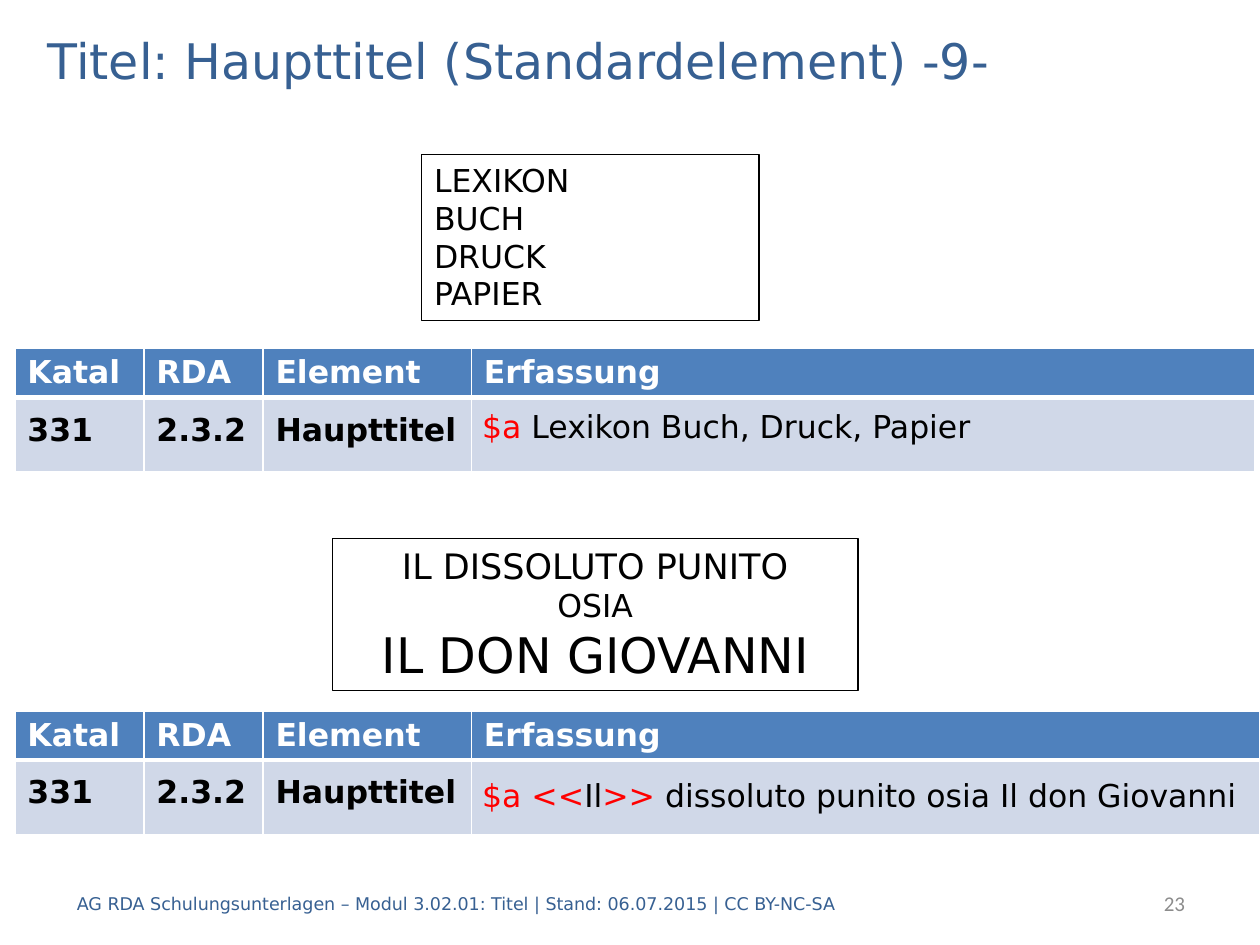
from lxml.etree import SubElement
from pptx import Presentation
from pptx.dml.color import RGBColor
from pptx.enum.shapes import MSO_SHAPE as Shape
from pptx.enum.text import MSO_ANCHOR as Anchor, PP_ALIGN as Align
from pptx.oxml.ns import qn
from pptx.util import Cm, Pt

COLORS = {
    "title": "376092",
    "text": "000000",
    "marker": "FF0000",
    "header": "4F81BD",
    "row": "D0D8E8",
    "white": "FFFFFF",
    "number": "8C8C8C",
}


def rgb(name):
    return RGBColor.from_string(COLORS[name])


class SlideBuilder:
    font = "DejaVu Sans"

    def __init__(self, slide):
        self.slide = slide

    def add_run(self, paragraph, text, size=18, color="text", bold=False, font=None):
        run = paragraph.add_run()
        run.text = text
        run.font.name = font or self.font
        run.font.size = Pt(size)
        run.font.bold = bold
        run.font.color.rgb = rgb(color)

    def space(self, paragraph):
        paragraph.line_spacing = Pt(16)
        paragraph.space_after = Pt(6)

    def title(self, text, *box):
        heading = self.slide.shapes.title
        heading.left, heading.top, heading.width, heading.height = map(Cm, box)
        heading.text_frame.vertical_anchor = Anchor.MIDDLE
        paragraph = heading.text_frame.paragraphs[0]
        paragraph.alignment = Align.LEFT
        self.add_run(paragraph, text, 28, "title")

    def title_page(self, lines, align, *box):
        """Framed transcription of a title page; lines are (text, size)."""
        frame = self.slide.shapes.add_shape(Shape.RECTANGLE, *map(Cm, box))
        frame.shadow.inherit = False
        frame.fill.solid()
        frame.fill.fore_color.rgb = rgb("white")
        frame.line.color.rgb = rgb("text")
        frame.line.width = Pt(0.75)
        text_frame = frame.text_frame
        text_frame.word_wrap = True
        text_frame.vertical_anchor = Anchor.TOP
        for i, (text, size) in enumerate(lines):
            paragraph = text_frame.add_paragraph() if i else text_frame.paragraphs[0]
            paragraph.alignment = align
            self.add_run(paragraph, text, size)

    def borders(self, cell, bottom):
        properties = cell._tc.get_or_add_tcPr()
        for side, width in zip("LRTB", (1, 1, 1, bottom)):
            line = SubElement(properties, qn(f"a:ln{side}"), w=str(Pt(width)))
            fill = SubElement(line, qn("a:solidFill"))
            SubElement(fill, qn("a:srgbClr"), val=COLORS["white"])

    def table(self, rows, top, widths, heights=(0.89, 1.5)):
        grid = self.slide.shapes.add_table(
            len(rows), len(widths), Cm(0.3), Cm(top), Cm(sum(widths)), Cm(sum(heights))
        ).table
        for column, width in zip(grid.columns, widths):
            column.width = Cm(width)
        for r, (texts, height) in enumerate(zip(rows, heights)):
            grid.rows[r].height = Cm(height)
            for c, text in enumerate(texts):
                cell = grid.cell(r, c)
                self.borders(cell, bottom=1 if r else 3)
                cell.fill.solid()
                cell.fill.fore_color.rgb = rgb("row" if r else "header")
                paragraph = cell.text_frame.paragraphs[0]
                if r:
                    cell.vertical_anchor = Anchor.MIDDLE
                    self.space(paragraph)
                if text:
                    self.add_run(paragraph, text, 18, "text" if r else "white", True)

    def text(self, runs, *box, anchor=Anchor.MIDDLE, align=Align.LEFT, wrap=True):
        """Text box; each run is a dict of add_run arguments."""
        text_frame = self.slide.shapes.add_textbox(*map(Cm, box)).text_frame
        text_frame.word_wrap = wrap
        text_frame.vertical_anchor = anchor
        paragraph = text_frame.paragraphs[0]
        paragraph.alignment = align
        for run in runs:
            self.add_run(paragraph, **run)
        return paragraph

    def entry(self, parts, *box, wrap=True):
        """Catalogue entry; parts are (text, color)."""
        runs = [{"text": text, "color": color} for text, color in parts]
        self.space(self.text(runs, *box, anchor=Anchor.TOP, wrap=wrap))


def main():
    prs = Presentation()
    prs.slide_width, prs.slide_height = Cm(25.4), Cm(19.05)
    builder = SlideBuilder(prs.slides.add_slide(prs.slide_layouts[5]))
    catalogue = [
        ("Katal", "RDA", "Element", "Erfassung"),
        ("331", "2.3.2", "Haupttitel", ""),
    ]
    label_widths = [2.6, 2.4, 4.2]

    builder.title("Titel: Haupttitel (Standardelement) -9-", 0.71, 0.5, 24, 1.42)

    # First example
    words = ("LEXIKON", "BUCH", "DRUCK", "PAPIER")
    builder.title_page([(word, 18) for word in words], Align.LEFT, 8.5, 3.12, 6.8, 3.34)
    builder.table(catalogue, 7.02, label_widths + [15.8])

    # Second example
    opera = [("IL DISSOLUTO PUNITO", 20), ("OSIA", 18), ("IL DON GIOVANNI", 28)]
    builder.title_page(opera, Align.CENTER, 6.7, 10.85, 10.6, 3.07)
    builder.table(catalogue, 14.33, label_widths + [15.9])

    # Footer
    builder.text(
        [{"text": "23", "size": 12, "color": "number", "font": "Calibri"}],
        20.1, 17.7, 4.04, 1.02, align=Align.RIGHT,
    )
    footer = "AG RDA Schulungsunterlagen – Modul 3.02.01: Titel | Stand: 06.07.2015 | CC BY-NC-SA"
    builder.text([{"text": footer, "size": 10, "color": "title"}], 1.3, 17.7, 17, 1.02)

    # Entries laid over the last column
    builder.entry(
        [("$a ", "marker"), ("Lexikon Buch, Druck, Papier", "text")],
        9.47, 8.28, 10.6, 0.84, wrap=False,
    )
    builder.entry(
        [("$a <<", "marker"), ("Il", "text"), (">> ", "marker"),
         ("dissoluto punito osia Il don Giovanni", "text")],
        9.47, 15.72, 16.8, 0.84,
    )
    prs.save("out.pptx")


if __name__ == "__main__":
    main()
